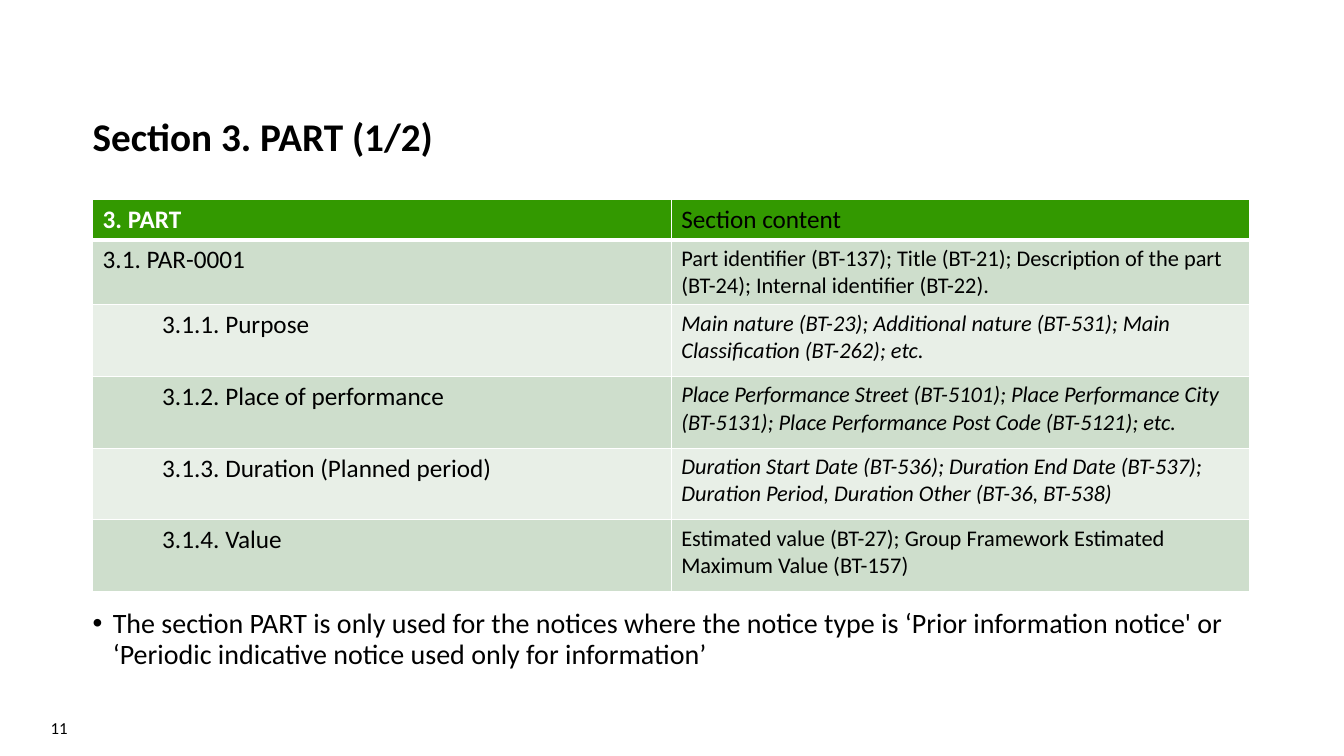
from lxml import etree
from pptx import Presentation, util as u
from pptx.dml.color import RGBColor
from pptx.enum import text
from pptx.oxml import ns

LEFT, WIDTH = 66.2, 826.6
HEADER, DARK, LIGHT = "339900", "CEDECC", "E8EFE7"


def colour(value):
    return RGBColor.from_string(value)


def write(frame, words, values, shade="000000", **font):
    """Fill a text frame with one paragraph, formatting frame and font."""
    for name, value in values.items():
        setattr(frame, name, value)
    para = frame.paragraphs[0]
    span = para.add_run()
    span.text = words
    for name, value in {"name": "Calibri", "bold": False, **font}.items():
        setattr(span.font, name, value)
    span.font.color.rgb = colour(shade)
    return para


deck = Presentation()
deck.slide_width, deck.slide_height = u.Pt(960), u.Pt(540)
page = deck.slides.add_slide(deck.slide_layouts[5])

# Title
title = page.shapes.title
title.left, title.top, title.width, title.height = map(u.Pt, (LEFT, 10, WIDTH, 104.4))
para = write(title.text_frame, "Section 3. PART (1/2)", {
    "word_wrap": True, "auto_size": text.MSO_AUTO_SIZE.NONE,
    "vertical_anchor": text.MSO_ANCHOR.BOTTOM,
    "margin_left": 0, "margin_top": u.Pt(3.6), "margin_right": 0, "margin_bottom": 0,
}, size=u.Pt(28), bold=True)
para.alignment = text.PP_ALIGN.LEFT
para.line_spacing = 0.9

# Table: section, content, content in italics
rows = [
    ("3. PART", "Section content", False),
    ("3.1. PAR-0001", "Part identifier (BT-137); Title (BT-21); Description of the part "
     "(BT-24); Internal identifier (BT-22).", False),
    ("3.1.1. Purpose", "Main nature (BT-23); Additional nature (BT-531); "
     "Main Classification (BT-262); etc.", True),
    ("3.1.2. Place of performance", "Place Performance Street (BT-5101); Place Performance "
     "City (BT-5131); Place Performance Post Code (BT-5121); etc.", True),
    ("3.1.3. Duration (Planned period)", "Duration Start Date (BT-536); Duration End Date "
     "(BT-537); Duration Period, Duration Other (BT-36, BT-538)", True),
    ("3.1.4. Value", "Estimated value (BT-27); Group Framework Estimated "
     "Maximum Value (BT-157)", False),
]
heights = [29.2, 46] + [51.2] * 4
table = page.shapes.add_table(len(rows), 2, u.Pt(LEFT), u.Pt(142.2),
                              u.Pt(WIDTH), u.Pt(sum(heights))).table
for column in table.columns:
    column.width = u.Pt(WIDTH / 2)

for r, (section, content, italic) in enumerate(rows):
    table.rows[r].height = u.Pt(heights[r])
    for c, words in enumerate((section, content)):
        cell = table.cell(r, c)
        heading = r == 0 and c == 0
        para = write(cell.text_frame, words, {},
                     shade="FFFFFF" if heading else "000000",
                     size=u.Pt(16 if r and c else 18),
                     bold=heading, italic=italic and c == 1)
        if r > 1 and c == 0:
            para.level = 2
            para._p.get_or_add_pPr().set("marL", str(u.Pt(42.5)))
            para._p.get_or_add_pPr().set("indent", "0")
        edges = cell._tc.get_or_add_tcPr()
        for side in ("lnL", "lnR", "lnT", "lnB"):
            thick = (r, side) in ((0, "lnB"), (1, "lnT"))
            line = etree.SubElement(edges, ns.qn("a:" + side), w=str(u.Pt(3 if thick else 1)))
            fill = etree.SubElement(line, ns.qn("a:solidFill"))
            etree.SubElement(fill, ns.qn("a:srgbClr"), val="FFFFFF")
        cell.fill.solid()
        cell.fill.fore_color.rgb = colour(HEADER if r == 0 else DARK if r % 2 else LIGHT)

# Bulleted remark
remark = page.shapes.add_textbox(*map(u.Pt, (LEFT, 432, WIDTH, 52.6)))
para = write(remark.text_frame, "The section PART is only used for the notices where the "
             "notice type is ‘Prior information notice' or ‘Periodic indicative notice "
             "used only for information’",
             {"word_wrap": True, "margin_left": 0}, size=u.Pt(20))
para.line_spacing = 0.9
properties = para._p.get_or_add_pPr()
properties.set("marL", str(u.Pt(14.4)))
properties.set("indent", str(-u.Pt(14.4)))
etree.SubElement(properties, ns.qn("a:buFont"), typeface="Arial")
etree.SubElement(properties, ns.qn("a:buChar"), char="•")

# Page number
number = page.shapes.add_textbox(*map(u.Pt, (0, 505.4, 55.4, 28.8)))
para = write(number.text_frame, "11",
             {"word_wrap": True, "vertical_anchor": text.MSO_ANCHOR.MIDDLE}, size=u.Pt(12))
para.alignment = text.PP_ALIGN.RIGHT

deck.save("out.pptx")
